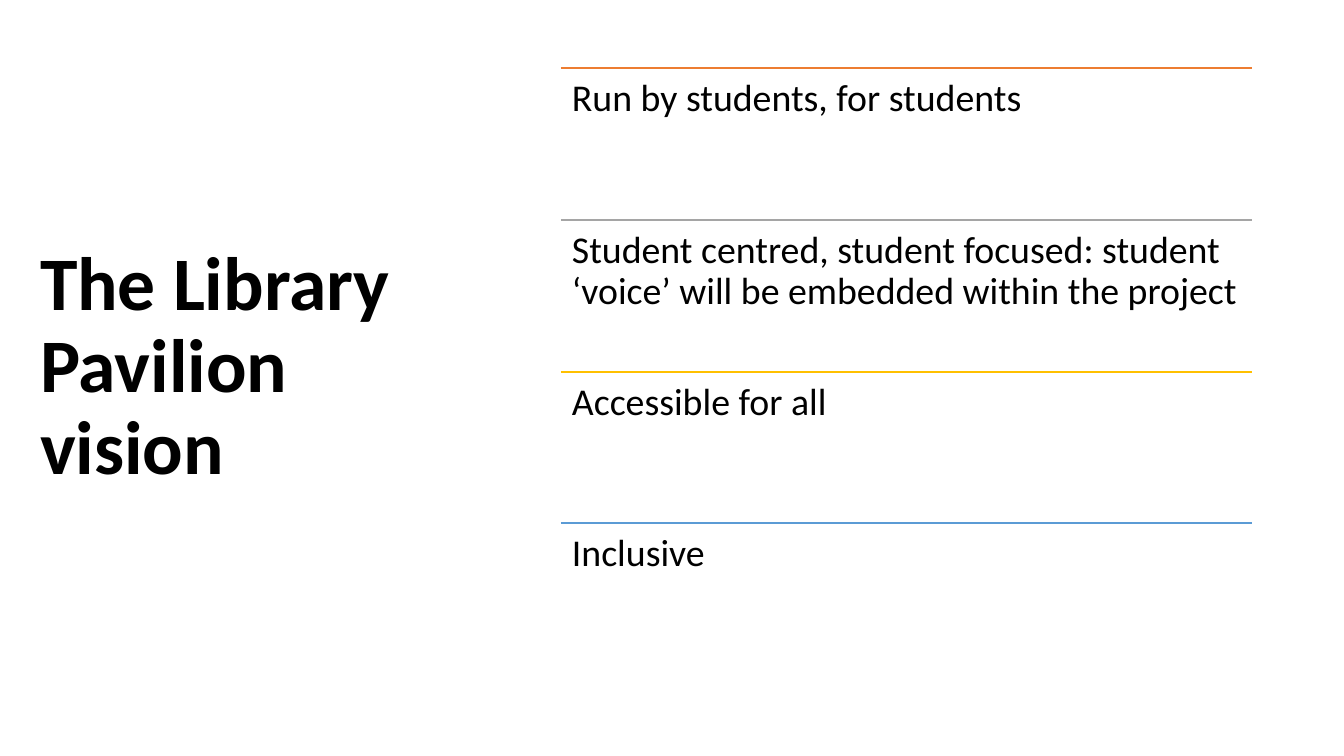
from pptx import Presentation
from pptx import util as u
from pptx.dml.color import RGBColor
from pptx.enum import shapes, text
from pptx.oxml.ns import qn
from lxml import etree

SCALE = 12192000 / 1344  # EMU per px
FONT = "Calibri"
BLACK = RGBColor(0x00, 0x00, 0x00)
ORANGE = RGBColor(0xED, 0x7D, 0x31)
GREY = RGBColor(0xA5, 0xA5, 0xA5)
GOLD = RGBColor(0xFF, 0xC0, 0x00)
BLUE = RGBColor(0x5B, 0x9B, 0xD5)

VISION = [
    ("Run by students, for students", ORANGE),
    ("Student centred, student focused: student ‘voice’ will be embedded "
     "within the project", GREY),
    ("Accessible for all", GOLD),
    ("Inclusive", BLUE),
]
LIST_LEFT, LIST_TOP, LIST_WIDTH, LIST_HEIGHT = 561, 68, 691, 607


def px(n):
    return u.Emu(round(n * SCALE))


def add_text(s, words, left, top, width, height, size, bold=False,
             anchor=text.MSO_ANCHOR.TOP, inset_x=11, inset_y=11):
    sp = s.shapes.add_textbox(px(left), px(top), px(width), px(height))
    tf = sp.text_frame
    tf.word_wrap = True
    tf.vertical_anchor = anchor
    tf.margin_left = tf.margin_right = px(inset_x)
    tf.margin_top = tf.margin_bottom = px(inset_y)
    p = tf.paragraphs[0]
    p.line_spacing = 0.9
    r = p.add_run()
    r.text = words
    r.font.name = FONT
    r.font.size = u.Pt(size)
    r.font.bold = bold
    r.font.color.rgb = BLACK


def add_rule(s, left, top, width, color):
    line = s.shapes.add_connector(shapes.MSO_CONNECTOR.STRAIGHT, px(left),
                                  px(top), px(left + width), px(top))
    line.line.color.rgb = color
    line.line.width = u.Pt(1)
    etree.SubElement(line._element.spPr, qn("a:effectLst"))


def main():
    prs = Presentation()
    prs.slide_width, prs.slide_height = px(1344), px(756)
    s = prs.slides.add_slide(prs.slide_layouts[6])

    add_text(s, "The Library Pavilion vision", 30, 61, 433, 614, 54, bold=True,
             anchor=text.MSO_ANCHOR.MIDDLE, inset_x=10, inset_y=5)

    row = LIST_HEIGHT / len(VISION)
    for i, (words, color) in enumerate(VISION):
        top = round(LIST_TOP + i * row)
        add_rule(s, LIST_LEFT, top, LIST_WIDTH, color)
        add_text(s, words, LIST_LEFT, top, LIST_WIDTH, round(row), 27)

    prs.save("out.pptx")


if __name__ == "__main__":
    main()
